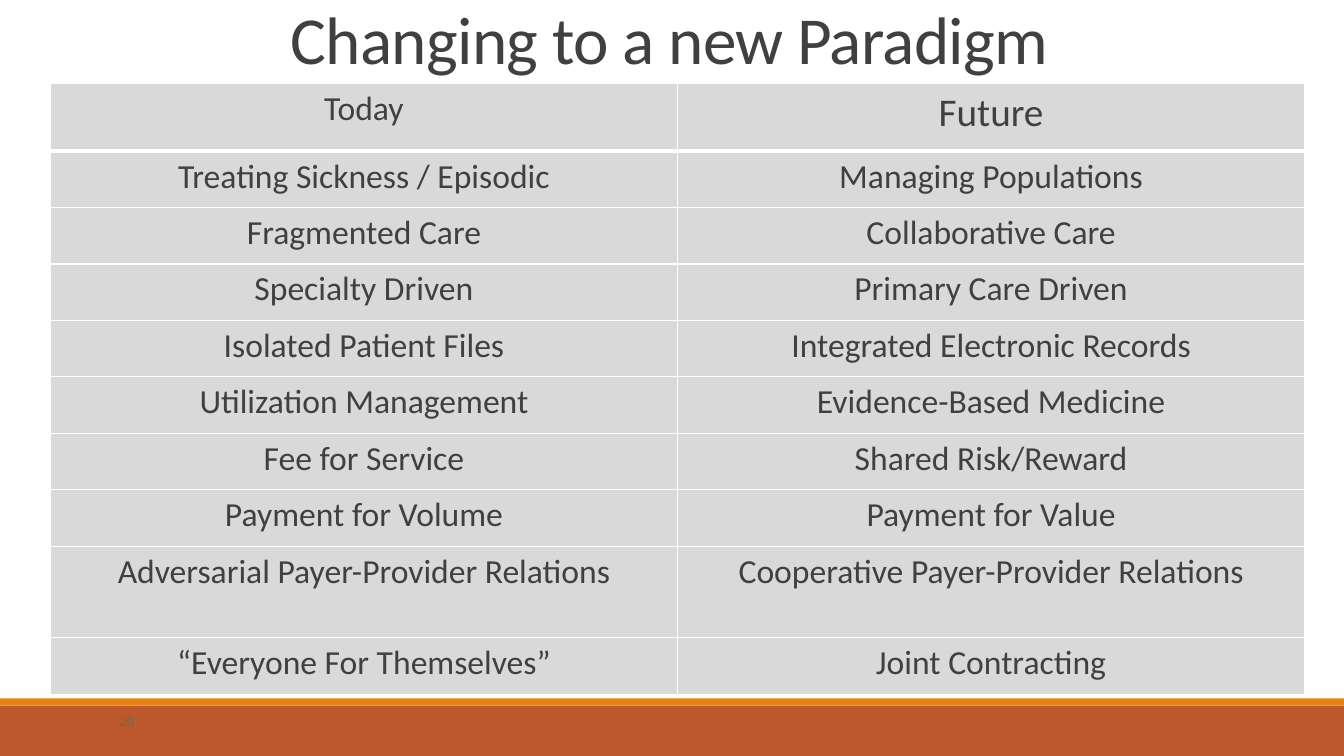
from lxml import etree
from pptx import Presentation
from pptx.dml.color import RGBColor
from pptx.enum.shapes import MSO_SHAPE
from pptx.enum.text import MSO_ANCHOR, PP_ALIGN
from pptx.oxml.ns import qn
from pptx.util import Inches, Pt

RECT = MSO_SHAPE.RECTANGLE
BOTTOM, MIDDLE = MSO_ANCHOR.BOTTOM, MSO_ANCHOR.MIDDLE
CENTER, LEFT = PP_ALIGN.CENTER, PP_ALIGN.LEFT
RUST = RGBColor(0xBD, 0x58, 0x2C)
ORANGE = RGBColor(0xE4, 0x83, 0x12)
INK = RGBColor(0x40, 0x40, 0x40)
OLIVE = RGBColor(0x63, 0x70, 0x52)
GRAY = RGBColor(0xD9, 0xD9, 0xD9)
WHITE = RGBColor(0xFF, 0xFF, 0xFF)
FONT = "Calibri"

ROWS = [
    ("Today", "Future"),
    ("Treating Sickness / Episodic", "Managing Populations"),
    ("Fragmented Care", "Collaborative Care"),
    ("Specialty Driven", "Primary Care Driven"),
    ("Isolated Patient Files", "Integrated Electronic Records"),
    ("Utilization Management", "Evidence-Based Medicine"),
    ("Fee for Service", "Shared Risk/Reward"),
    ("Payment for Volume", "Payment for Value"),
    ("Adversarial Payer-Provider Relations",
     "Cooperative Payer-Provider Relations"),
    ("“Everyone For Themselves”", "Joint Contracting"),
]
HEIGHTS = {0: 0.67, 8: 0.91}
ROW_H = 0.56


def style(para, size, color, align):
    """Set the font and alignment of a paragraph."""
    para.alignment = align
    font = para.font
    font.name, font.size, font.bold = FONT, Pt(size), False
    font.color.rgb = color


def add_text(slide, box, text, size, color, align, anchor):
    """Place one paragraph of text in a box and return the paragraph."""
    frame = slide.shapes.add_textbox(*map(Inches, box)).text_frame
    frame.word_wrap = True
    frame.vertical_anchor = anchor
    para = frame.paragraphs[0]
    para.text = text
    style(para, size, color, align)
    return para


def add_title(slide, box):
    """Place the slide title at the bottom of its box."""
    para = add_text(slide, box, "Changing to a new Paradigm", 48, INK,
                    CENTER, BOTTOM)
    para.line_spacing = 0.85
    para.runs[0].font._element.set("spc", "-50")


def add_footer(slide, box):
    """Draw the orange strip, the rust band and the slide number."""
    left, top, width, height = box
    strip = 0.07
    bands = [(top + strip, height - strip, RUST), (top, strip, ORANGE)]
    for y, tall, color in bands:
        band = slide.shapes.add_shape(
            RECT, *map(Inches, (left, y, width, tall)))
        band.shadow.inherit = False
        band.fill.solid()
        band.fill.fore_color.rgb = color
        band.line.fill.background()
    add_text(slide, (left + 1.09, top + 0.07, 2, 0.3), "20", 10, OLIVE,
             LEFT, MIDDLE)


def add_edges(cell, base):
    """Draw the white borders of a cell, with its own bottom width."""
    props = cell._tc.get_or_add_tcPr()
    for side, width in (("L", 1), ("R", 1), ("T", 1), ("B", base)):
        edge = etree.SubElement(props, qn("a:ln" + side), w=str(Pt(width)))
        fill = etree.SubElement(edge, qn("a:solidFill"))
        etree.SubElement(fill, qn("a:srgbClr"), val=str(WHITE))


def add_grid(slide, box):
    """Build the table that compares today with the future."""
    table = slide.shapes.add_table(
        len(ROWS), 2, *map(Inches, box)).table
    table.horz_banding = False
    for col in table.columns:
        col.width = Inches(box[2] / 2)
    for i, texts in enumerate(ROWS):
        table.rows[i].height = Inches(HEIGHTS.get(i, ROW_H))
        for j, text in enumerate(texts):
            cell = table.cell(i, j)
            cell.margin_left = cell.margin_right = Inches(0.13)
            cell.margin_top = cell.margin_bottom = Inches(0.05)
            add_edges(cell, 3 if i == 0 else 1)
            cell.fill.solid()
            cell.fill.fore_color.rgb = GRAY
            cell.text = text
            size = 28 if text == "Future" else 24
            style(cell.text_frame.paragraphs[0], size, INK, CENTER)


def main():
    """Build the slide and save it."""
    deck = Presentation()
    deck.slide_width, deck.slide_height = Inches(13.33), Inches(7.5)
    slide = deck.slides.add_slide(deck.slide_layouts[6])
    add_footer(slide, (0, 6.93, 13.33, 0.57))
    add_title(slide, (0.5, 0, 12.28, 0.83))
    add_grid(slide, (0.5, 0.83, 12.44, 6.05))
    deck.save("out.pptx")


if __name__ == "__main__":
    main()
